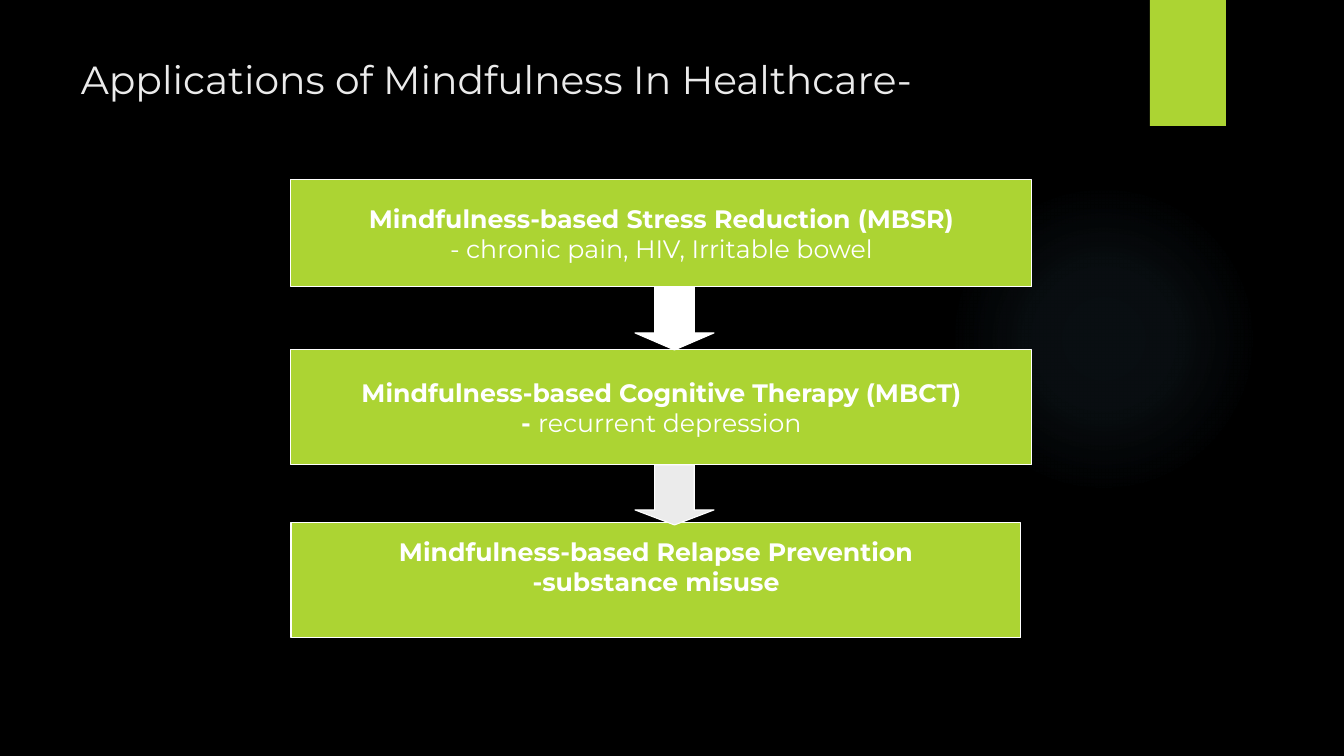
from lxml import etree
from pptx import Presentation
from pptx.dml.color import RGBColor
from pptx.enum.shapes import MSO_SHAPE
from pptx.enum.text import MSO_ANCHOR, PP_ALIGN
from pptx.oxml import parse_xml
from pptx.oxml.ns import nsdecls
from pptx.util import Emu, Pt

PX = 914400 / 100.8
FONT = "Montserrat"
COLORS = {"black": "000000", "green": "ACD433", "white": "FFFFFF",
          "light": "EBEBEB", "glow": "7AC4F0"}


def px(*lengths):
    return [Emu(round(n * PX)) for n in lengths]


def add_solid(kind, box, fill, line=None):
    sp = slide.shapes.add_shape(kind, *px(*box))
    sp.shadow.inherit = False
    sp.fill.solid()
    sp.fill.fore_color.rgb = RGBColor.from_string(COLORS[fill])
    if line:
        sp.line.color.rgb = RGBColor.from_string(COLORS[line])
        sp.line.width = Pt(0.75)
    else:
        sp.line.fill.background()
    return sp


prs = Presentation()
prs.slide_width, prs.slide_height = px(1344, 756)
slide = prs.slides.add_slide(prs.slide_layouts[6])
slide.background.fill.solid()
slide.background.fill.fore_color.rgb = RGBColor.from_string(COLORS["black"])

glow = add_solid(MSO_SHAPE.OVAL, (949, 184, 310, 310), "glow")
grad = parse_xml(
    f'<a:gradFill {nsdecls("a")} rotWithShape="1"><a:gsLst/>'
    '<a:path path="circle"><a:fillToRect l="50000" t="50000" r="50000" b="50000"/>'
    '</a:path></a:gradFill>')
A = "{" + grad.nsmap["a"] + "}"
for pos, alpha in ((0, 7), (36, 6), (69, 0)):
    gs = etree.SubElement(grad[0], A + "gs", pos=str(pos * 1000))
    clr = etree.SubElement(gs, A + "srgbClr", val=COLORS["glow"])
    etree.SubElement(clr, A + "alpha", val=str(alpha * 1000))
spPr = glow._element.spPr
spPr.replace(spPr.find(A + "solidFill"), grad)

add_solid(MSO_SHAPE.RECTANGLE, (1150, 0, 76, 126), "green")

title = slide.shapes.add_textbox(*px(71, 50, 1037, 107))
tf = title.text_frame
tf.word_wrap = True
p = tf.paragraphs[0]
p.text = "Applications of Mindfulness In Healthcare-"
p.font.name = FONT
p.font.size = Pt(28)
p.font.color.rgb = RGBColor.from_string(COLORS["light"])

therapies = [
    ((291, 180, 741, 107), MSO_ANCHOR.MIDDLE,
     [[("Mindfulness-based Stress Reduction (MBSR)", True)],
      [("- chronic pain, HIV, Irritable bowel", False)]]),
    ((291, 350, 741, 115), MSO_ANCHOR.MIDDLE,
     [[("Mindfulness-based Cognitive Therapy (MBCT)", True)],
      [("- ", True), ("recurrent depression", False)]]),
    ((291, 523, 730, 115), MSO_ANCHOR.TOP,
     [[("Mindfulness-based Relapse Prevention", True)],
      [("-substance misuse", True)]]),
]
for box, anchor, lines in therapies:
    sp = add_solid(MSO_SHAPE.RECTANGLE, box, "green", "white")
    tf = sp.text_frame
    tf.word_wrap = True
    tf.vertical_anchor = anchor
    if anchor == MSO_ANCHOR.TOP:
        tf.margin_top = px(13)[0]
    for i, runs in enumerate(lines):
        p = tf.add_paragraph() if i else tf.paragraphs[0]
        p.alignment = PP_ALIGN.CENTER
        p.font.name = FONT
        p.font.size = Pt(18)
        p.font.color.rgb = RGBColor.from_string(COLORS["white"])
        for text, bold in runs:
            r = p.add_run()
            r.text = text
            r.font.bold = bold

for top, height, head, fill in ((287, 63, 0.27, "white"), (465, 60, 0.25, "light")):
    arrow = add_solid(MSO_SHAPE.DOWN_ARROW, (635, top, 79, height), fill, "white")
    arrow.adjustments[0] = 0.5
    arrow.adjustments[1] = head

prs.save("out.pptx")
